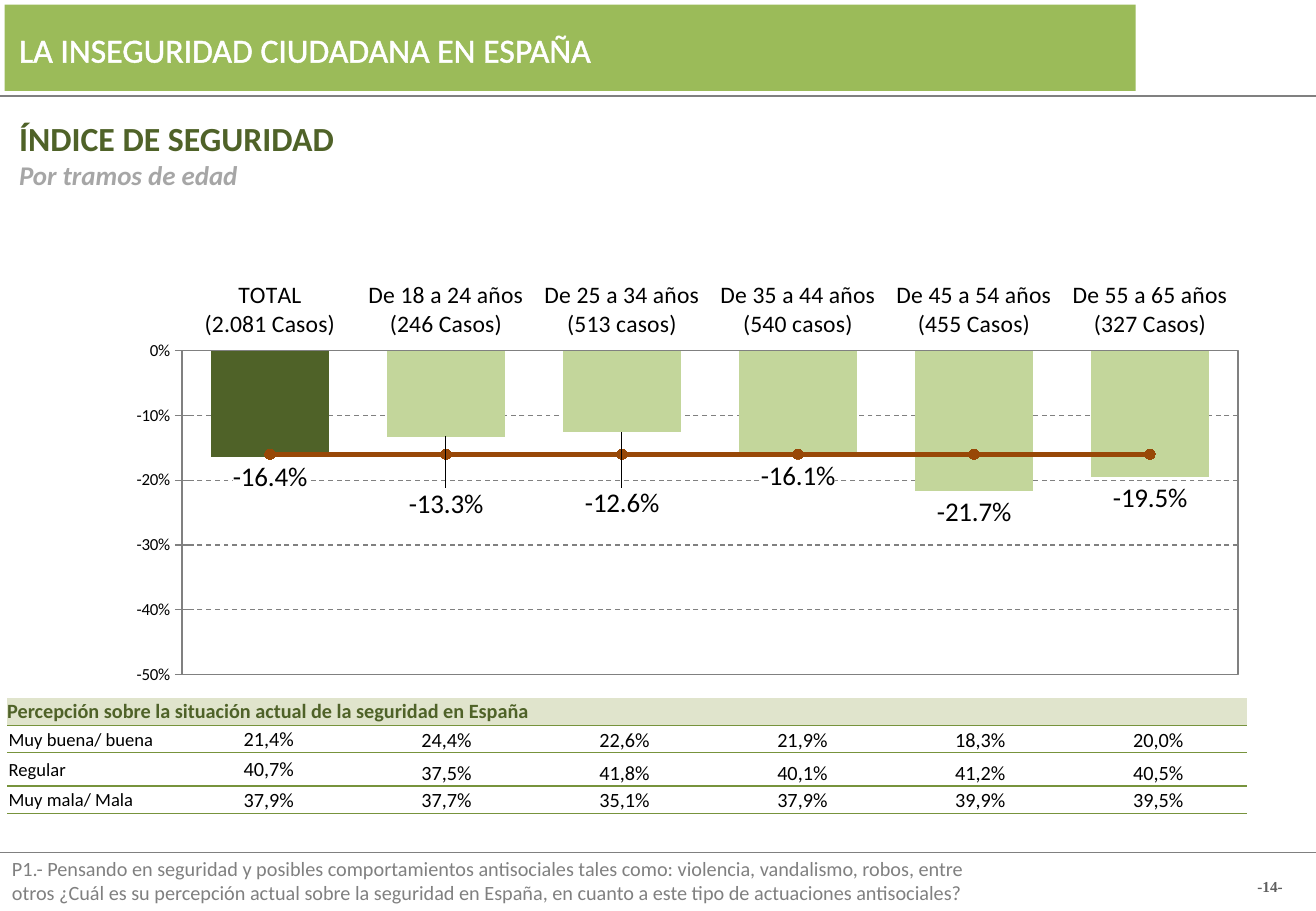
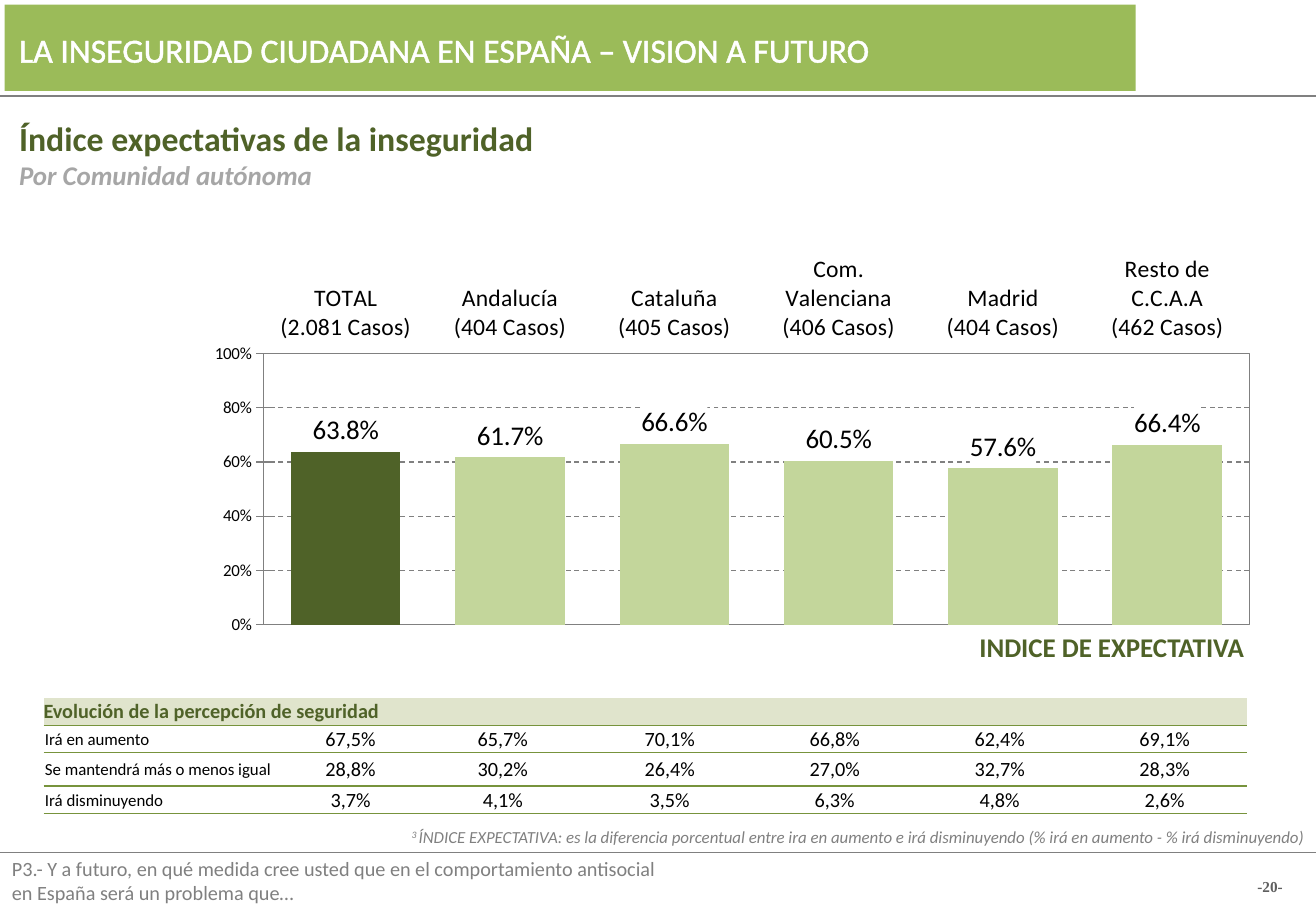
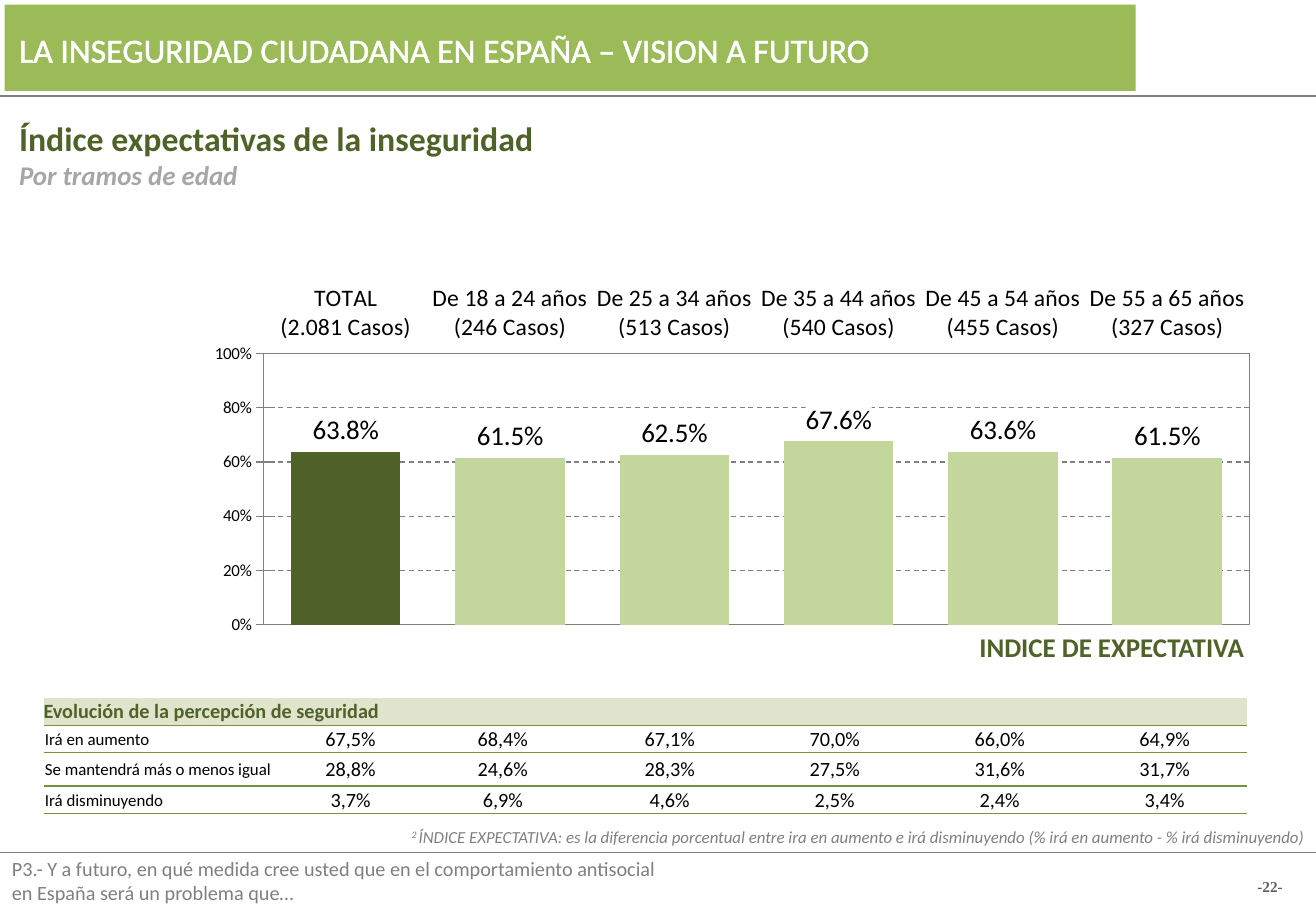
from copy import deepcopy
from dataclasses import dataclass

from lxml import etree
from pptx import Presentation
from pptx import util as u
from pptx.chart.data import CategoryChartData
from pptx.dml.color import RGBColor
from pptx.enum import chart as charts, dml, shapes, text
from pptx.oxml import parse_xml
from pptx.oxml.ns import nsdecls, qn

FONT = "Calibri"
SERIF = "Times New Roman"
WHITE = "FFFFFF"
BLACK = "000000"
GREY = "808080"
LIGHT_GREY = "A6A6A6"
NUMBER_GREY = "5F5F5F"
BAND_GREEN = "9BBB59"
DARK_GREEN = "4F6228"
BAR_GREEN = "C3D69B"
RULE_GREEN = "77933C"
HEADER_GREEN = "E0E4CC"
BROWN = "984807"

PAGE_WIDTH, PAGE_HEIGHT = 27.52, 19.05
RULE_TOPS = (17.83, 2.01)
TABLE_TOP = 14.6
ROW_HEIGHTS = (0.57, 0.57, 0.7, 0.57)


@dataclass(frozen=True)
class Area:
    left: float
    top: float
    width: float
    height: float

    def lengths(self) -> list:
        return [u.Cm(n) for n in (self.left, self.top, self.width, self.height)]


@dataclass(frozen=True)
class Style:
    size: float
    color: str
    bold: bool = False
    italic: bool = False
    font: str = FONT


@dataclass(frozen=True)
class Graph:
    area: Area
    plot: tuple[float, float, float, float]
    categories: tuple[str, ...]
    values: tuple[float, ...]
    low: int
    high: int
    step: int
    reference: int | None = None
    lowered_labels: tuple[tuple[int, float], ...] = ()


@dataclass(frozen=True)
class Grid:
    left: float
    widths: tuple[float, ...]
    heading: str
    label_size: int
    rows: tuple[tuple[str, str], ...]
    bottom_values: bool = False


@dataclass(frozen=True)
class Page:
    number: int
    title: str
    heading: str
    subheading: str
    question: str
    graph: Graph
    grid: Grid
    note_mark: str = ""


def rgb(color: str) -> RGBColor:
    return RGBColor.from_string(color)


def set_font(font, style: Style) -> None:
    font.size = u.Pt(style.size)
    font.name = style.font
    font.bold = style.bold
    font.italic = style.italic
    font.color.rgb = rgb(style.color)


def set_line(line, color: str, width: float) -> None:
    line.color.rgb = rgb(color)
    line.width = u.Pt(width)


def add_text(slide, area: Area, lines: list[tuple[str, Style]],
             align=text.PP_ALIGN.LEFT):
    box = slide.shapes.add_textbox(*area.lengths())
    frame = box.text_frame
    frame.word_wrap = True
    for index, (words, style) in enumerate(lines):
        para = frame.add_paragraph() if index else frame.paragraphs[0]
        para.text = words
        para.alignment = align
        set_font(para.font, style)
    return frame


def outline_text(span, color: str) -> None:
    span._r.get_or_add_rPr().insert(0, parse_xml(
        f'<a:ln {nsdecls("a")} w="9525"><a:solidFill><a:srgbClr val="{color}"/>'
        '</a:solidFill></a:ln>'))


def add_frame(slide, page: Page) -> None:
    """Draw the rules, title band, headings, question and page number."""
    for top in RULE_TOPS:
        rule = slide.shapes.add_connector(
            shapes.MSO_CONNECTOR.STRAIGHT, 0, u.Cm(top), u.Cm(PAGE_WIDTH), u.Cm(top))
        set_line(rule.line, GREY, 0.75)
        etree.SubElement(rule._element.spPr, qn("a:effectLst"))

    band = slide.shapes.add_shape(
        shapes.MSO_SHAPE.RECTANGLE, *Area(0.1, 0.1, 23.65, 1.8).lengths())
    band.shadow.inherit = False
    band.fill.solid()
    band.fill.fore_color.rgb = rgb(BAND_GREEN)
    band.line.fill.background()

    number = add_text(slide, Area(25.86, 18.34, 1.4, 0.38),
                      [(f"-{page.number}-", Style(9, NUMBER_GREY, True, font=SERIF))],
                      text.PP_ALIGN.CENTER)
    number.vertical_anchor = text.MSO_ANCHOR.MIDDLE
    number.margin_left = number.margin_right = 0
    number.margin_top = number.margin_bottom = 0

    title = add_text(slide, Area(0.15, 0.48, 22.5, 1.12), [(page.title, Style(20, WHITE))])
    outline_text(title.paragraphs[0].runs[0], WHITE)
    add_text(slide, Area(0.15, 2.34, 24, 1.8), [
        (page.heading, Style(20, DARK_GREEN, True)),
        (page.subheading, Style(16, LIGHT_GREY, True, True))])
    add_text(slide, Area(0, 17.78, 20.96, 1.27), [(page.question, Style(12, GREY))])


def set_plot_layout(plot_area, plot: tuple[float, float, float, float]) -> None:
    for old in plot_area.findall(qn("c:layout")):
        plot_area.remove(old)
    sides = "".join(f'<c:{name} val="{value}"/>' for name, value in zip("xywh", plot))
    plot_area.insert(0, parse_xml(
        f'<c:layout {nsdecls("c")}><c:manualLayout><c:layoutTarget val="inner"/>'
        f'<c:xMode val="edge"/><c:yMode val="edge"/>{sides}</c:manualLayout></c:layout>'))


def frame_plot(plot_area) -> None:
    plot_area.append(parse_xml(
        f'<c:spPr {nsdecls("c", "a")}><a:noFill/><a:ln w="9525"><a:solidFill>'
        f'<a:srgbClr val="{GREY}"/></a:solidFill></a:ln></c:spPr>'))


def lower_label(series, index: int, shift: float) -> None:
    """Move one data label down by a share of the chart height."""
    labels = series.data_labels._element
    series.points[index].data_label.position = charts.XL_LABEL_POSITION.OUTSIDE_END
    label = labels.xpath(f'c:dLbl[c:idx/@val="{index}"]')[0]
    parts = [parse_xml(
        f'<c:layout {nsdecls("c")}><c:manualLayout><c:x val="0"/>'
        f'<c:y val="{shift}"/></c:manualLayout></c:layout>')]
    for name in ("c:numFmt", "c:spPr", "c:txPr"):
        for old in label.findall(qn(name)):
            label.remove(old)
        parts.append(deepcopy(labels.find(qn(name))))
    for place, part in enumerate(parts, start=1):
        label.insert(place, part)


def move_to_line(chart) -> None:
    """Turn the second column series into a line with markers."""
    bars = chart._chartSpace.xpath(".//c:barChart")[0]
    series = bars.findall(qn("c:ser"))[1]
    for flag in series.findall(qn("c:invertIfNegative")):
        series.remove(flag)
    line_chart = parse_xml(
        f'<c:lineChart {nsdecls("c")}><c:grouping val="standard"/>'
        '<c:varyColors val="0"/><c:marker val="1"/></c:lineChart>')
    line_chart.insert(2, series)
    for axis in bars.findall(qn("c:axId")):
        line_chart.append(deepcopy(axis))
    bars.addnext(line_chart)

    line = chart.plots[1].series[0]
    line.smooth = False
    set_line(line.format.line, BROWN, 3)
    line.marker.style = charts.XL_MARKER_STYLE.CIRCLE
    line.marker.size = 6
    line.marker.format.fill.solid()
    line.marker.format.fill.fore_color.rgb = rgb(BROWN)
    line.marker.format.line.color.rgb = rgb(BROWN)


def style_axes(chart, graph: Graph) -> None:
    categories, values = chart.category_axis, chart.value_axis
    categories.major_tick_mark = charts.XL_TICK_MARK.NONE
    categories.tick_label_position = charts.XL_TICK_LABEL_POSITION.HIGH
    set_font(categories.tick_labels.font, Style(14, BLACK))
    values.minimum_scale, values.maximum_scale = graph.low, graph.high
    values.major_unit = graph.step
    values.major_tick_mark = charts.XL_TICK_MARK.CROSS
    values.tick_labels.number_format = r"0\%"
    values.tick_labels.number_format_is_linked = False
    set_font(values.tick_labels.font, Style(10, BLACK))
    grid = values.major_gridlines.format.line
    for line in (categories.format.line, values.format.line, grid):
        set_line(line, GREY, 0.75)
    grid.dash_style = dml.MSO_LINE.DASH


def add_graph(slide, graph: Graph) -> None:
    data = CategoryChartData()
    data.categories = graph.categories
    data.add_series("Series 1", graph.values)
    if graph.reference is not None:
        data.add_series("Series 2", [graph.reference] * len(graph.values))
    chart = slide.shapes.add_chart(
        charts.XL_CHART_TYPE.COLUMN_CLUSTERED, *graph.area.lengths(), data).chart
    chart.has_legend = False
    chart.has_title = False
    set_font(chart.font, Style(18, BLACK, font=SERIF))
    style_axes(chart, graph)
    if graph.reference is not None:
        move_to_line(chart)

    columns = chart.plots[0]
    columns.gap_width = 50
    columns.vary_by_categories = False
    series = columns.series[0]
    series.invert_if_negative = False
    for bar, color in ((series, BAR_GREEN), (series.points[0], DARK_GREEN)):
        bar.format.fill.solid()
        bar.format.fill.fore_color.rgb = rgb(color)

    labels = series.data_labels
    labels.show_value = True
    labels.number_format = r"0.0\%"
    labels.number_format_is_linked = False
    labels.position = charts.XL_LABEL_POSITION.OUTSIDE_END
    set_font(labels.font, Style(16, BLACK))
    labels._element.find(qn("c:numFmt")).addnext(parse_xml(
        f'<c:spPr {nsdecls("c", "a")}><a:solidFill><a:srgbClr val="{WHITE}"/>'
        '</a:solidFill></c:spPr>'))
    for index, shift in graph.lowered_labels:
        lower_label(series, index, shift)

    plot_area = chart._chartSpace.xpath(".//c:plotArea")[0]
    set_plot_layout(plot_area, graph.plot)
    frame_plot(plot_area)


def set_borders(cell, ruled: str) -> None:
    """Rule the named sides (T, B) and clear the others."""
    properties = cell._tc.get_or_add_tcPr()
    for place, side in enumerate("LRTB"):
        paint = (f'<a:solidFill><a:srgbClr val="{RULE_GREEN}"/></a:solidFill>'
                 if side in ruled else "<a:noFill/>")
        properties.insert(place, parse_xml(
            f'<a:ln{side} {nsdecls("a")} w="12700">{paint}</a:ln{side}>'))


def fill_cell(cell, words: str, style: Style, align, anchor, margin: float) -> None:
    cell.margin_left = cell.margin_right = cell.margin_top = u.Cm(margin)
    cell.margin_bottom = 0
    cell.vertical_anchor = anchor
    para = cell.text_frame.paragraphs[0]
    para.text = words
    para.alignment = align
    set_font(para.font, style)


def add_grid(slide, grid: Grid) -> None:
    area = Area(grid.left, TABLE_TOP, sum(grid.widths), sum(ROW_HEIGHTS))
    table = slide.shapes.add_table(
        len(ROW_HEIGHTS), len(grid.widths), *area.lengths()).table
    table.first_row = table.horz_banding = False
    for column, width in zip(table.columns, grid.widths):
        column.width = u.Cm(width)
    for row, height in zip(table.rows, ROW_HEIGHTS):
        row.height = u.Cm(height)

    middle, bottom = text.MSO_ANCHOR.MIDDLE, text.MSO_ANCHOR.BOTTOM
    for cell in table.rows[0].cells:
        cell.fill.solid()
        cell.fill.fore_color.rgb = rgb(HEADER_GREEN)
        set_borders(cell, "B")
    header = table.cell(0, 0)
    header.merge(table.cell(0, len(grid.widths) - 1))
    fill_cell(header, grid.heading, Style(12, DARK_GREEN, True),
              text.PP_ALIGN.LEFT, middle, 0)

    for row, (label, values) in enumerate(grid.rows, start=1):
        for column, words in enumerate([label, *values.split()]):
            cell = table.cell(row, column)
            cell.fill.background()
            set_borders(cell, "TB")
            fill_cell(cell, words,
                      Style(12 if column else grid.label_size, BLACK),
                      text.PP_ALIGN.CENTER if column else text.PP_ALIGN.LEFT,
                      bottom if grid.bottom_values and column > 1 else middle, 0.03)


def add_index_texts(slide, mark: str) -> None:
    """Add the index caption under the chart and its footnote."""
    add_text(slide, Area(16.08, 13.06, 10.19, 0.93),
             [("INDICE DE EXPECTATIVA", Style(16, DARK_GREEN, True))],
             text.PP_ALIGN.RIGHT)
    note = add_text(slide, Area(3.71, 17.17, 23.8, 0.68),
                    [(f"{mark} ", Style(10, GREY, italic=True))], text.PP_ALIGN.RIGHT)
    para = note.paragraphs[0]
    para.runs[0]._r.get_or_add_rPr().set("baseline", "30000")
    para.add_run().text = ("ÍNDICE EXPECTATIVA: es la diferencia porcentual entre ira en "
                           "aumento e irá disminuyendo (% irá en aumento - % irá "
                           "disminuyendo)")


def age_categories(third_word: str) -> tuple[str, ...]:
    """Age bands; the third and fourth write the word for cases their own way."""
    return ("TOTAL\n(2.081 Casos)", "De 18 a 24 años\n(246 Casos)",
            f"De 25 a 34 años\n(513 {third_word})", f"De 35 a 44 años\n(540 {third_word})",
            "De 45 a 54 años\n(455 Casos)", "De 55 a 65 años\n(327 Casos)")


def outlook_page(number: int, subheading: str, mark: str, categories: tuple[str, ...],
                 values: tuple[float, ...], more: str, same: str, less: str) -> Page:
    return Page(
        number, "LA INSEGURIDAD CIUDADANA EN ESPAÑA – VISION A FUTURO",
        "Índice expectativas de la inseguridad", subheading,
        "P3.- Y a futuro, en qué medida cree usted que en el comportamiento antisocial\n"
        "en España será un problema que…",
        Graph(Area(4.17, 5.23, 22.36, 8.23), (0.06, 0.263, 0.922, 0.689),
              categories, values, 0, 100, 20),
        Grid(0.91, (5, 2.84, 3.53) + (3.45,) * 4,
             "Evolución de la percepción de seguridad", 10,
             (("Irá en aumento", more), ("Se mantendrá más o menos igual", same),
              ("Irá disminuyendo", less))),
        mark)


PAGES = (
    Page(14, "LA INSEGURIDAD CIUDADANA EN ESPAÑA", "ÍNDICE DE SEGURIDAD",
         "Por tramos de edad",
         "P1.- Pensando en seguridad y posibles comportamientos antisociales tales como: "
         "violencia, vandalismo, robos, entre otros ¿Cuál es su percepción actual sobre la "
         "seguridad en España, en cuanto a este tipo de actuaciones antisociales?",
         Graph(Area(2.39, 5.69, 23.98, 8.81), (0.059, 0.187, 0.921, 0.768),
               age_categories("casos"), (-16.4, -13.3, -12.6, -16.1, -21.7, -19.5),
               -50, 0, 10, -16, ((1, 0.11), (2, 0.12))),
         Grid(0.15, (3.61,) + (3.72,) * 6,
              "Percepción sobre la situación actual de la seguridad en España", 11,
              (("Muy buena/ buena", "21,4% 24,4% 22,6% 21,9% 18,3% 20,0%"),
               ("Regular", "40,7% 37,5% 41,8% 40,1% 41,2% 40,5%"),
               ("Muy mala/ Mala", "37,9% 37,7% 35,1% 37,9% 39,9% 39,5%")), True)),
    outlook_page(20, "Por Comunidad autónoma", "3",
                 ("TOTAL\n(2.081 Casos)", "Andalucía\n(404 Casos)",
                  "Cataluña\n(405 Casos)", "Com. Valenciana\n(406 Casos)",
                  "Madrid\n(404 Casos)", "Resto de C.C.A.A\n(462 Casos)"),
                 (63.8, 61.7, 66.6, 60.5, 57.6, 66.4),
                 "67,5% 65,7% 70,1% 66,8% 62,4% 69,1%",
                 "28,8% 30,2% 26,4% 27,0% 32,7% 28,3%",
                 "3,7% 4,1% 3,5% 6,3% 4,8% 2,6%"),
    outlook_page(22, "Por tramos de edad", "2", age_categories("Casos"),
                 (63.8, 61.5, 62.5, 67.6, 63.6, 61.5),
                 "67,5% 68,4% 67,1% 70,0% 66,0% 64,9%",
                 "28,8% 24,6% 28,3% 27,5% 31,6% 31,7%",
                 "3,7% 6,9% 4,6% 2,5% 2,4% 3,4%"),
)


def main() -> None:
    deck = Presentation()
    deck.slide_width, deck.slide_height = u.Cm(PAGE_WIDTH), u.Cm(PAGE_HEIGHT)
    for page in PAGES:
        slide = deck.slides.add_slide(deck.slide_layouts[6])
        add_frame(slide, page)
        add_graph(slide, page.graph)
        add_grid(slide, page.grid)
        if page.note_mark:
            add_index_texts(slide, page.note_mark)
    deck.save("out.pptx")


if __name__ == "__main__":
    main()
